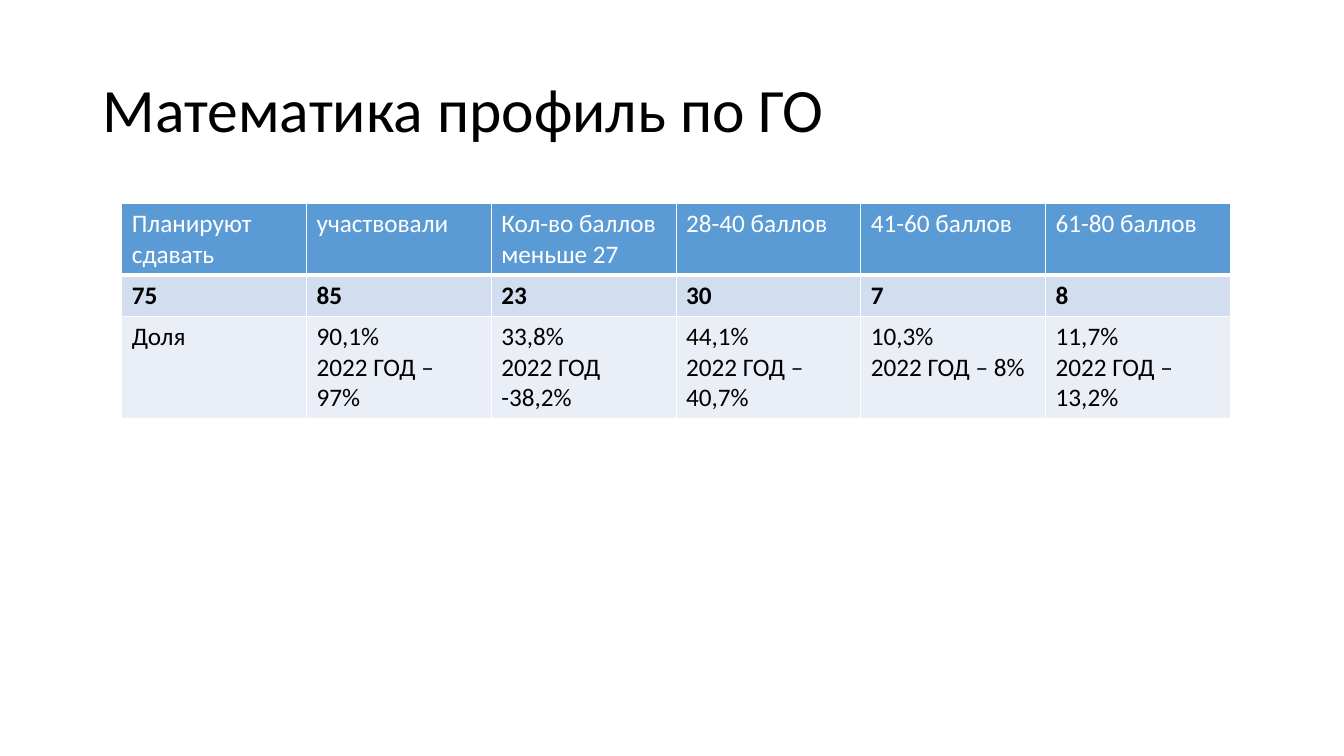
import dataclasses

import pptx
import pptx.dml.color
import pptx.enum.text
import pptx.oxml
import pptx.oxml.ns
import pptx.util

EMU_PER_PX = 9525
FONT = "Calibri"
BLACK = pptx.dml.color.RGBColor(0x00, 0x00, 0x00)
WHITE = pptx.dml.color.RGBColor(0xFF, 0xFF, 0xFF)
HEADER_BLUE = pptx.dml.color.RGBColor(0x5B, 0x9B, 0xD5)
COUNT_BLUE = pptx.dml.color.RGBColor(0xD2, 0xDE, 0xEF)
SHARE_BLUE = pptx.dml.color.RGBColor(0xEA, 0xEF, 0xF7)

COLUMN_WIDTH = 176


@dataclasses.dataclass(frozen=True)
class ResultRow:
    texts: tuple[str, ...]
    height: int
    fill: pptx.dml.color.RGBColor
    color: pptx.dml.color.RGBColor = BLACK
    bold: bool = False
    bottom_border: int = 1


RESULT_ROWS = (
    ResultRow(
        ("Планируют сдавать", "участвовали", "Кол-во баллов меньше 27",
         "28-40 баллов", "41-60 баллов", "61-80 баллов"),
        height=68, fill=HEADER_BLUE, color=WHITE, bottom_border=3,
    ),
    ResultRow(("75", "85", "23", "30", "7", "8"),
              height=39, fill=COUNT_BLUE, bold=True),
    ResultRow(
        ("Доля", "90,1%\n2022 ГОД – 97%", "33,8%\n2022 ГОД -38,2%",
         "44,1%\n2022 ГОД – 40,7%", "10,3%\n2022 ГОД – 8%",
         "11,7%\n2022 ГОД – 13,2%"),
        height=97, fill=SHARE_BLUE,
    ),
)


def px(length: int) -> pptx.util.Emu:
    return pptx.util.Emu(length * EMU_PER_PX)


def write_text(frame, text: str, *, size: int, color=BLACK, bold: bool = False,
               line_spacing: float = 1.0) -> None:
    frame.text = text
    for paragraph in frame.paragraphs:
        paragraph.alignment = pptx.enum.text.PP_ALIGN.LEFT
        paragraph.line_spacing = line_spacing
        for run in paragraph.runs:
            run.font.name = FONT
            run.font.size = pptx.util.Pt(size)
            run.font.bold = bold
            run.font.color.rgb = color


def add_borders(cell, bottom_width: int) -> None:
    """Draw white cell borders; they must precede the fill in the cell's XML."""
    properties = cell._tc.get_or_add_tcPr()
    widths = {"lnL": 1, "lnR": 1, "lnT": 1, "lnB": bottom_width}
    for position, (side, width) in enumerate(widths.items()):
        border = pptx.oxml.parse_xml(
            f'<a:{side} {pptx.oxml.ns.nsdecls("a")} w="{pptx.util.Pt(width)}">'
            f'<a:solidFill><a:srgbClr val="{WHITE}"/></a:solidFill></a:{side}>'
        )
        properties.insert(position, border)


def add_title(slide) -> None:
    title = slide.shapes.title
    title.left, title.top, title.width, title.height = map(px, (88, 38, 1104, 139))
    frame = title.text_frame
    frame.auto_size = pptx.enum.text.MSO_AUTO_SIZE.NONE
    frame.vertical_anchor = pptx.enum.text.MSO_ANCHOR.MIDDLE
    write_text(frame, "Математика профиль по ГО", size=44, line_spacing=0.9)


def add_results(slide) -> None:
    column_count = len(RESULT_ROWS[0].texts)
    results = slide.shapes.add_table(
        len(RESULT_ROWS), column_count, px(116), px(194),
        px(COLUMN_WIDTH * column_count), px(sum(row.height for row in RESULT_ROWS)),
    ).table
    for column in results.columns:
        column.width = px(COLUMN_WIDTH)
    for row_index, row in enumerate(RESULT_ROWS):
        results.rows[row_index].height = px(row.height)
        for column_index, text in enumerate(row.texts):
            cell = results.cell(row_index, column_index)
            cell.fill.solid()
            cell.fill.fore_color.rgb = row.fill
            add_borders(cell, row.bottom_border)
            write_text(cell.text_frame, text, size=18, color=row.color, bold=row.bold)


def main() -> None:
    presentation = pptx.Presentation()
    presentation.slide_width = px(1280)
    presentation.slide_height = px(720)
    title_only = presentation.slide_layouts.get_by_name("Title Only")
    slide = presentation.slides.add_slide(title_only)
    add_title(slide)
    add_results(slide)
    presentation.save("out.pptx")


if __name__ == "__main__":
    main()
